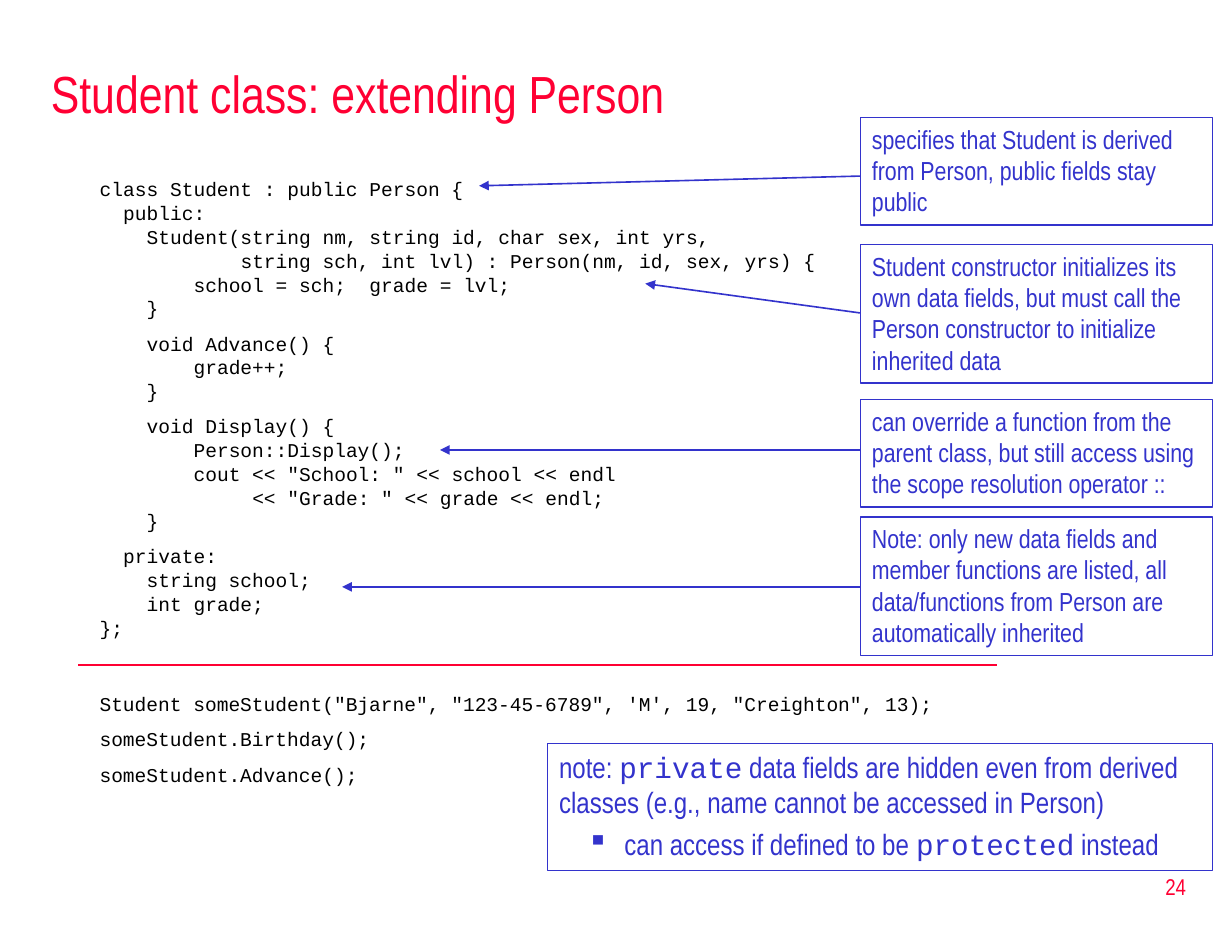
import pptx
import pptx.util
import pptx.dml.color
import pptx.enum.shapes
import pptx.enum.text
import pptx.oxml.ns
import lxml.etree

Pt = pptx.util.Pt
ALIGN = pptx.enum.text.PP_ALIGN
ANCHOR = pptx.enum.text.MSO_ANCHOR
AUTO_SIZE = pptx.enum.text.MSO_AUTO_SIZE

COLORS = {"red": "FF0033", "blue": "3333CC", "black": "000000"}
SANS, MONO = "Arial Narrow", "Courier New"

TITLE = "Student class: extending Person"
PAGE_NUMBER = "24"

# Each block of code is set off from the one before it.
CLASS_BLOCKS = [
    """class Student : public Person {
  public:
    Student(string nm, string id, char sex, int yrs,
            string sch, int lvl) : Person(nm, id, sex, yrs) {
        school = sch;  grade = lvl;
    }""",
    """    void Advance() {
        grade++;
    }""",
    """    void Display() {
        Person::Display();
        cout << "School: " << school << endl
             << "Grade: " << grade << endl;
    }""",
    """  private:
    string school;
    int grade;
};""",
]
USAGE = [
    """Student someStudent("Bjarne", "123-45-6789", 'M', 19, "Creighton", 13);""",
    "someStudent.Birthday();",
    "someStudent.Advance();",
]

# Text, box top, box height, arrow start height, arrow tip
CALLOUTS = [
    ("specifies that Student is derived from Person, public fields stay public",
     72, 66, 108, (294, 114)),
    ("Student constructor initializes its own data fields, but must call the "
     "Person constructor to initialize inherited data",
     150, 85, 192, (396, 174)),
    ("can override a function from the parent class, but still access using "
     "the scope resolution operator ::",
     245, 66, 276, (270, 276)),
    ("Note: only new data fields and member functions are listed, all "
     "data/functions from Person are automatically inherited",
     317, 85, 360, (210, 360)),
]
CALLOUT_LEFT, CALLOUT_WIDTH = 528, 216

NOTE = [
    [("note: ", SANS), ("private", MONO),
     (" data fields are hidden even from derived classes "
      "(e.g., name cannot be accessed in Person)", SANS)],
    [(" can access if defined to be ", SANS), ("protected", MONO), (" instead", SANS)],
]

CODE_SIZE = 12
CHARACTER_WIDTH = 0.6 * CODE_SIZE
LINE_GAP, BLOCK_GAP, USAGE_GAP = 3.1, 10, 7.2


def color(name):
    return pptx.dml.color.RGBColor.from_string(COLORS[name])


def add_run(paragraph, text, font, size, color_name):
    run = paragraph.add_run()
    run.text = text
    run.font.name = font
    run.font.size = Pt(size)
    run.font.color.rgb = color(color_name)


def next_paragraph(frame):
    """Return the untouched first paragraph, or else a new one."""
    first = frame.paragraphs[0]
    paragraph = frame.add_paragraph() if first.runs else first
    paragraph.alignment = ALIGN.LEFT
    return paragraph


def place(shape, left, top, width, height):
    shape.left, shape.top = Pt(left), Pt(top)
    shape.width, shape.height = Pt(width), Pt(height)


def set_indent(paragraph, margin, indent=0, bullet=None):
    properties = paragraph._p.get_or_add_pPr()
    properties.set("marL", str(Pt(margin)))
    properties.set("indent", str(Pt(indent)))
    tag = "a:buChar" if bullet else "a:buNone"
    element = lxml.etree.SubElement(properties, pptx.oxml.ns.qn(tag))
    if bullet:
        element.set("char", bullet)


def add_box(slide, left, top, width, height):
    box = slide.shapes.add_shape(
        pptx.enum.shapes.MSO_SHAPE.RECTANGLE, Pt(left), Pt(top), Pt(width), Pt(height))
    box.shadow.inherit = False
    box.fill.background()
    box.line.color.rgb = color("blue")
    box.line.width = Pt(1)
    frame = box.text_frame
    frame.word_wrap = True
    frame.vertical_anchor = ANCHOR.TOP
    frame.auto_size = AUTO_SIZE.SHAPE_TO_FIT_TEXT
    return frame


def add_line(slide, start, end, color_name, arrow=False):
    line = slide.shapes.add_connector(
        pptx.enum.shapes.MSO_CONNECTOR.STRAIGHT, *map(Pt, start + end))
    line.line.color.rgb = color(color_name)
    line.line.width = Pt(1)
    if arrow:
        tail = lxml.etree.SubElement(line.line._get_or_add_ln(), pptx.oxml.ns.qn("a:tailEnd"))
        tail.set("type", "triangle")
    lxml.etree.SubElement(line._element.spPr, pptx.oxml.ns.qn("a:effectLst"))


def add_title(slide):
    title = slide.shapes.title
    place(title, 24, 30, 714, 54)
    title.text_frame.vertical_anchor = ANCHOR.MIDDLE
    title.text_frame.auto_size = AUTO_SIZE.NONE
    add_run(next_paragraph(title.text_frame), TITLE, SANS, 32, "red")


def add_class_code(slide):
    body = slide.placeholders[1]
    place(body, 54, 108, 462, 312)
    frame = body.text_frame
    frame.auto_size = AUTO_SIZE.NONE
    for block in CLASS_BLOCKS:
        for number, line in enumerate(block.split("\n")):
            is_first = not frame.paragraphs[0].runs
            paragraph = next_paragraph(frame)
            gap = LINE_GAP if number else BLOCK_GAP
            paragraph.space_before = Pt(0 if is_first else gap)
            paragraph.line_spacing = 0.8
            code = line.lstrip()
            set_indent(paragraph, (len(line) - len(code)) * CHARACTER_WIDTH)
            add_run(paragraph, code, MONO, CODE_SIZE, "black")


def add_usage(slide):
    frame = slide.shapes.add_textbox(Pt(54), Pt(421), Pt(552), Pt(65)).text_frame
    frame.word_wrap = True
    for number, line in enumerate(USAGE):
        paragraph = next_paragraph(frame)
        paragraph.space_before = Pt(USAGE_GAP if number else 0)
        add_run(paragraph, line, MONO, CODE_SIZE, "black")


def add_callouts(slide):
    for text, top, height, arrow_top, tip in CALLOUTS:
        frame = add_box(slide, CALLOUT_LEFT, top, CALLOUT_WIDTH, height)
        add_run(next_paragraph(frame), text, SANS, 16, "blue")
        add_line(slide, (CALLOUT_LEFT, arrow_top), tip, "blue", arrow=True)


def add_note(slide):
    frame = add_box(slide, 336, 456, 408, 78)
    for runs in NOTE:
        paragraph = next_paragraph(frame)
        for text, font in runs:
            add_run(paragraph, text, font, 18, "blue")
    paragraph.level = 1
    paragraph.space_before = Pt(4)
    set_indent(paragraph, 36, -18.75, "▪")


def add_page_number(slide):
    frame = slide.shapes.add_textbox(Pt(577.5), Pt(525), Pt(157.5), Pt(38)).text_frame
    frame.word_wrap = True
    frame.vertical_anchor = ANCHOR.MIDDLE
    paragraph = next_paragraph(frame)
    paragraph.alignment = ALIGN.RIGHT
    add_run(paragraph, PAGE_NUMBER, SANS, 14, "red")


def main():
    presentation = pptx.Presentation()
    presentation.slide_width, presentation.slide_height = Pt(756), Pt(576)
    slide = presentation.slides.add_slide(presentation.slide_layouts[1])
    add_page_number(slide)
    add_title(slide)
    add_class_code(slide)
    add_usage(slide)
    add_callouts(slide)
    add_line(slide, (48, 408), (612, 408), "red")
    add_note(slide)
    presentation.save("out.pptx")


if __name__ == "__main__":
    main()
